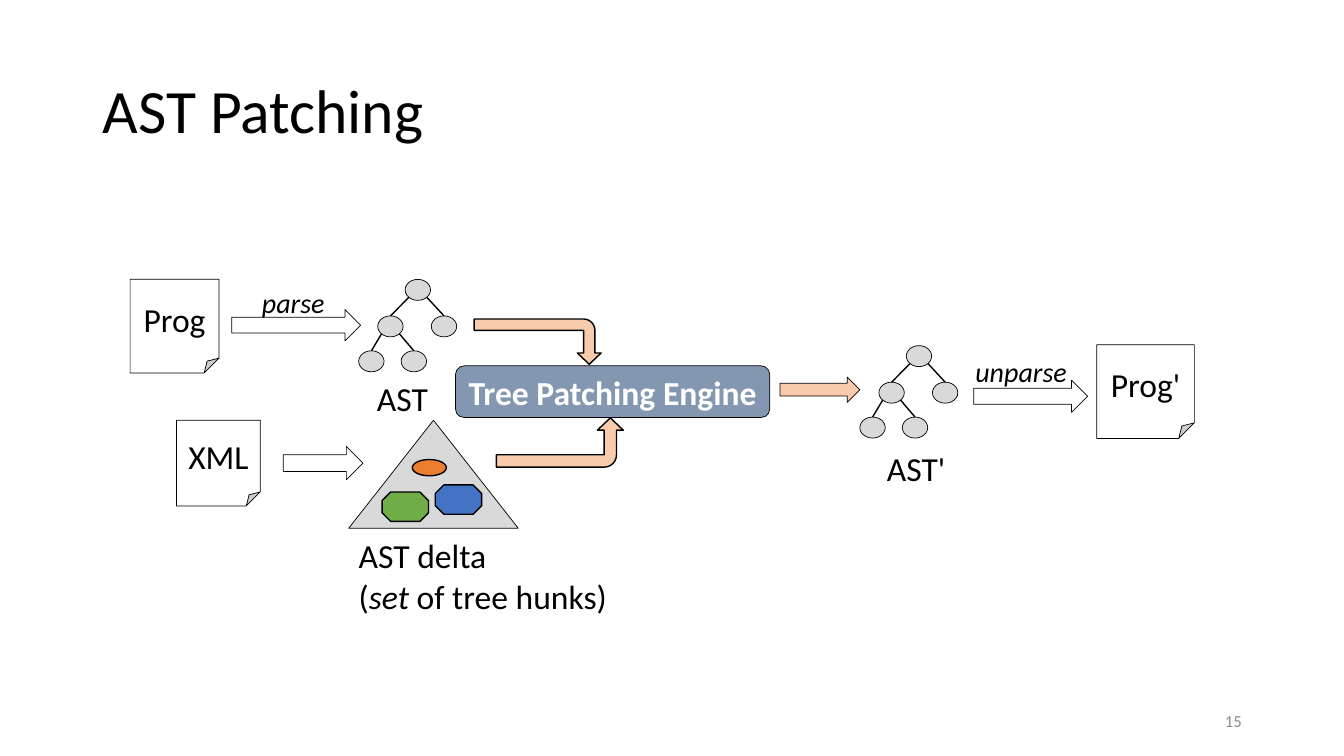
"""Builds the AST Patching slide: programs and deltas flow through a tree patching engine."""
from dataclasses import dataclass
from typing import Any

from lxml.etree import SubElement
from pptx import Presentation
from pptx.dml.color import RGBColor
from pptx.enum.shapes import MSO_CONNECTOR, MSO_SHAPE as SHAPE
from pptx.enum.text import MSO_ANCHOR as ANCHOR, PP_ALIGN as ALIGN
from pptx.oxml.ns import qn
from pptx.util import Cm, Pt

BLACK, WHITE, GREY, PEACH = "000000", "FFFFFF", "D9D9D9", "F8CBAD"
NODE_W, NODE_H = 0.64, 0.53
NODES = ((1.17, 0), (0.48, 0.92), (1.83, 0.92), (0, 1.8), (1.07, 1.8))
EDGES = ((0, 1), (0, 2), (1, 3), (1, 4))
BEND = (0.25, 0.264, 0.25, 0.247)


@dataclass
class Run:
    text: str
    italic: bool = False


@dataclass
class Box:
    kind: SHAPE
    x: float
    y: float
    w: float
    h: float
    fill: str = WHITE
    text: str = ""
    color: str = BLACK
    bold: bool = False
    line: float = 0.5


@dataclass
class Bend:
    x: float
    y: float
    w: float
    h: float
    flip: bool = False


@dataclass
class Label:
    x: float
    y: float
    w: float
    h: float
    paragraphs: tuple[tuple[Run, ...], ...]
    size: float = 24
    color: str = BLACK
    anchor: ANCHOR = ANCHOR.TOP
    align: ALIGN = ALIGN.LEFT
    spacing: float = 1.0
    wrap: bool = True


BOXES = (
    Box(SHAPE.FOLDED_CORNER, 3.28, 7.04, 2.24, 2.36, text="Prog"),
    Box(SHAPE.FOLDED_CORNER, 4.45, 10.59, 2.11, 2.16, text="XML"),
    Box(SHAPE.FOLDED_CORNER, 27.64, 8.69, 2.46, 2.36, text="Prog'"),
    Box(SHAPE.ROUNDED_RECTANGLE, 11.48, 9.22, 7.92, 1.3, "8497B0",
        "Tree Patching Engine", WHITE, True),
    Box(SHAPE.RIGHT_ARROW, 5.84, 7.8, 3.25, 0.79),
    Box(SHAPE.RIGHT_ARROW, 7.14, 11.25, 2.01, 0.84),
    Box(SHAPE.RIGHT_ARROW, 19.66, 9.5, 2.01, 0.64, PEACH),
    Box(SHAPE.RIGHT_ARROW, 24.54, 9.58, 2.87, 0.81),
    Box(SHAPE.ISOSCELES_TRIANGLE, 8.79, 10.59, 4.27, 2.72, GREY),
    Box(SHAPE.OCTAGON, 9.63, 12.4, 1.17, 0.74, "70AD47", line=1),
    Box(SHAPE.OCTAGON, 10.97, 12.22, 1.17, 0.74, "4472C4", line=1),
    Box(SHAPE.OVAL, 10.39, 11.58, 0.86, 0.41, "ED7D31", line=1),
)
BENDS = (Bend(12.98, 7.01, 1.14, 3.2), Bend(13.49, 9.55, 1.24, 3.2, True))
TREES = ((9.04, 7.04), (21.67, 8.71))
LABELS = (
    Label(2.34, 1.02, 29.21, 3.68, ((Run("AST Patching"),),), 44,
          anchor=ANCHOR.MIDDLE, spacing=0.9),
    Label(23.93, 17.65, 7.62, 1.02, ((Run("15"),),), 12, "8C8C8C",
          ANCHOR.MIDDLE, ALIGN.RIGHT),
    Label(9.25, 9.4, 2.06, 1.27, ((Run("AST"),),)),
    Label(22.1, 11.15, 2.13, 1.27, ((Run("AST'"),),)),
    Label(8.79, 13.36, 6.91, 2.31, (
        (Run("AST delta"),),
        (Run("("), Run("set", True), Run(" of tree hunks)")))),
    Label(6.35, 7.06, 2.11, 1.12, ((Run("parse", True),),), 20, wrap=False),
    Label(24.33, 8.81, 2.84, 1.12, ((Run("unparse", True),),), 20, wrap=False),
)


def rgb(color: str) -> RGBColor:
    """Turn a hex string into a colour."""
    return RGBColor.from_string(color)


def apply(target: Any, values: dict[str, Any]) -> None:
    """Set each named attribute on the target."""
    for name, value in values.items():
        setattr(target, name, value)


def add_run(p: Any, run: Run, size: float, color: str, bold: bool = False) -> None:
    """Append a formatted run to a paragraph."""
    r = p.add_run()
    r.text = run.text
    apply(r.font, {"name": "Calibri", "size": Pt(size), "bold": bold, "italic": run.italic})
    r.font.color.rgb = rgb(color)


def add_box(s: Any, box: Box) -> Any:
    """Draw a filled, outlined shape with optional centred text."""
    sp = s.shapes.add_shape(box.kind, Cm(box.x), Cm(box.y), Cm(box.w), Cm(box.h))
    sp.shadow.inherit = False
    sp.fill.solid()
    sp.fill.fore_color.rgb = rgb(box.fill)
    sp.line.color.rgb = rgb(BLACK)
    sp.line.width = Pt(box.line)
    if box.text:
        tf = sp.text_frame
        apply(tf, {"word_wrap": False, "vertical_anchor": ANCHOR.MIDDLE})
        p = tf.paragraphs[0]
        p.alignment = ALIGN.CENTER
        add_run(p, Run(box.text), 24, box.color, box.bold)
    return sp


def add_bend(s: Any, bend: Bend) -> None:
    """Draw a bent arrow that leads into the engine."""
    sp = add_box(s, Box(SHAPE.BENT_ARROW, bend.x, bend.y, bend.w, bend.h, PEACH, line=1))
    sp.rotation = 90
    for i, value in enumerate(BEND):
        sp.adjustments[i] = value
    if bend.flip:
        sp._element.spPr.find(qn("a:xfrm")).set("flipH", "1")


def add_tree(s: Any, left: float, top: float) -> None:
    """Draw a five-node syntax tree with edges from parents to children."""
    for x, y in NODES:
        add_box(s, Box(SHAPE.OVAL, left + x, top + y, NODE_W, NODE_H, GREY))
    for parent, child in EDGES:
        (px, py), (cx, cy) = NODES[parent], NODES[child]
        side = 0.15 if cx < px else 0.85
        line = s.shapes.add_connector(
            MSO_CONNECTOR.STRAIGHT,
            Cm(left + px + side * NODE_W), Cm(top + py + 0.85 * NODE_H),
            Cm(left + cx + NODE_W / 2), Cm(top + cy))
        line.line.color.rgb = rgb(BLACK)
        line.line.width = Pt(1)
        SubElement(line._element.spPr, qn("a:effectLst"))


def add_label(s: Any, label: Label) -> None:
    """Draw a text box with its paragraphs and runs."""
    tf = s.shapes.add_textbox(Cm(label.x), Cm(label.y), Cm(label.w), Cm(label.h)).text_frame
    apply(tf, {"word_wrap": label.wrap, "vertical_anchor": label.anchor})
    for i, runs in enumerate(label.paragraphs):
        p = tf.add_paragraph() if i else tf.paragraphs[0]
        apply(p, {"alignment": label.align, "line_spacing": label.spacing})
        for run in runs:
            add_run(p, run, label.size, label.color)


def main() -> None:
    """Build and save the slide."""
    prs = Presentation()
    apply(prs, {"slide_width": Cm(33.87), "slide_height": Cm(19.05)})
    s = prs.slides.add_slide(prs.slide_layouts[6])
    for box in BOXES:
        add_box(s, box)
    for bend in BENDS:
        add_bend(s, bend)
    for left, top in TREES:
        add_tree(s, left, top)
    for label in LABELS:
        add_label(s, label)
    prs.save("out.pptx")


if __name__ == "__main__":
    main()
